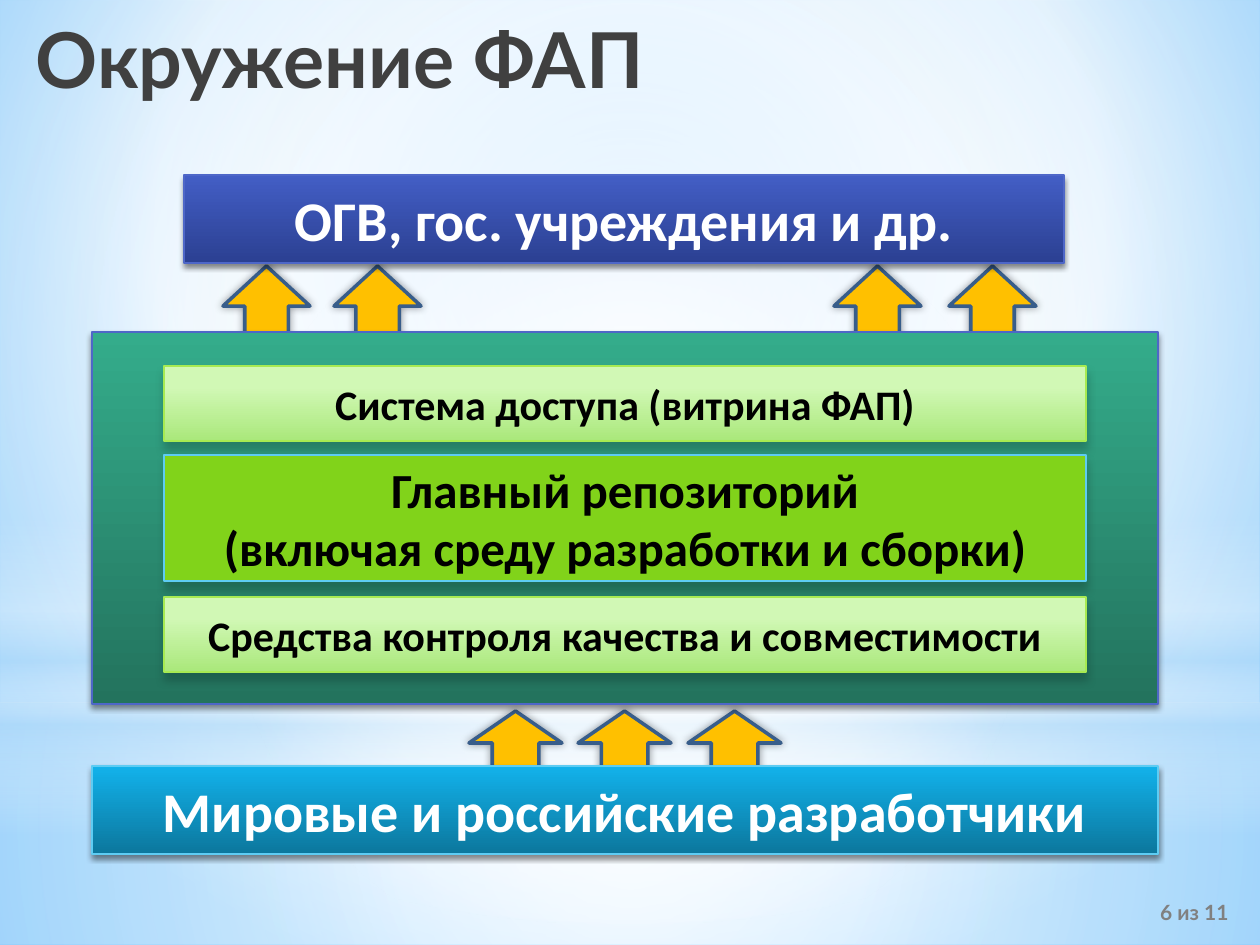
from lxml import etree
from pptx import Presentation
from pptx.dml.color import RGBColor as RGB
from pptx.enum.shapes import MSO_SHAPE as Shape
from pptx.enum.text import MSO_ANCHOR as Anchor, PP_ALIGN as Align
from pptx.oxml.ns import qn
from pptx.util import Emu, Pt

SCALE = 914400 / 126  # EMU in one px
WIDTH, HEIGHT = 1260, 945

COLORS = {
    "white": "FFFFFF", "black": "000000", "title": "404040", "page": "808080",
    "sky_mid": "9ED5FF", "sky_edge": "5BB9FF", "haze": "B4DCFA",
    "arrow": "FFC000", "arrow_line": "385D8A",
    "users_top": "435EC5", "users_bottom": "2B4092", "indigo": "4E67C8",
    "platform_top": "34AC8B", "platform_bottom": "23735D",
    "repo": "81D31A", "cyan": "5ECCF3",
    "layer_top": "D1F8B5", "layer_bottom": "AAE87B", "layer_line": "A7EA52",
    "devs_top": "12B2EB", "devs_bottom": "0C779D",
}

# Shadows: opacity %, blur pt, distance pt, direction in degrees
ARROW_SHADOW = (40, 5, 0, 0)
BAND_SHADOW = (45, 3.1, 1.8, 90)
LAYER_SHADOW = (20, 5, 4, 90)

BAND_FONT = {"name": "Calibri", "size": Pt(32), "bold": True}
LAYER_FONT = BAND_FONT | {"size": Pt(24)}
REPO_FONT = BAND_FONT | {"size": Pt(28)}
TITLE_FONT = {"name": "Lato", "size": Pt(44), "bold": True}
PAGE_FONT = TITLE_FONT | {"size": Pt(12)}


def px(*lengths):
    return [Emu(round(length * SCALE)) for length in lengths]


def add_color(parent, color, opacity=100):
    node = etree.SubElement(parent, qn("a:srgbClr"), val=COLORS[color])
    if opacity < 100:
        etree.SubElement(node, qn("a:alpha"), val=str(opacity * 1000))


def set_gradient(fill, owner, stops, center=None):
    """Vertical gradient, or a circular one around the center insets (l, t, r, b)."""
    fill.background()
    empty = owner.find(".//" + qn("a:noFill"))
    gradient = etree.Element(qn("a:gradFill"), rotWithShape="1")
    stop_list = etree.SubElement(gradient, qn("a:gsLst"))
    for position, *color in stops:
        stop = etree.SubElement(stop_list, qn("a:gs"), pos=str(position * 1000))
        add_color(stop, *color)
    if center:
        circle = etree.SubElement(gradient, qn("a:path"), {"path": "circle"})
        insets = {side: str(inset * 1000) for side, inset in zip("ltrb", center)}
        etree.SubElement(circle, qn("a:fillToRect"), insets)
    else:
        etree.SubElement(gradient, qn("a:lin"), ang="5400000", scaled="0")
    empty.getparent().replace(empty, gradient)


def add_box(slide, kind, box, fill, line=None, line_width=0.75, shadow=None, center=None):
    """Fill is a color name or a list of gradient stops."""
    shape = slide.shapes.add_shape(kind, *px(*box))
    if isinstance(fill, str):
        shape.fill.solid()
        shape.fill.fore_color.rgb = RGB.from_string(COLORS[fill])
    else:
        set_gradient(shape.fill, shape._element.spPr, fill, center)
    if line:
        shape.line.color.rgb = RGB.from_string(COLORS[line])
        shape.line.width = Pt(line_width)
    else:
        shape.line.fill.background()
    shape.shadow.inherit = False
    if shadow:
        opacity, blur, distance, direction = shadow
        effects = shape._element.spPr.find(qn("a:effectLst"))
        outer = etree.SubElement(
            effects, qn("a:outerShdw"), blurRad=str(Pt(blur)), dist=str(Pt(distance)),
            dir=str(direction * 60000), rotWithShape="0")
        add_color(outer, "black", opacity)
    return shape


def write(shape, lines, font, color, align=Align.CENTER, anchor=Anchor.MIDDLE, spacing=None):
    frame = shape.text_frame
    frame.word_wrap = True
    frame.vertical_anchor = anchor
    for index, line in enumerate(lines):
        paragraph = frame.add_paragraph() if index else frame.paragraphs[0]
        paragraph.alignment = align
        paragraph.line_spacing = spacing
        run = paragraph.add_run()
        run.text = line
        for attribute, value in font.items():
            setattr(run.font, attribute, value)
        run.font.color.rgb = RGB.from_string(COLORS[color])


def draw_backdrop(slide, box):
    left, top, width, height = box
    middle = (50, 50, 50, 50)
    set_gradient(slide.background.fill, slide._element,
                 [(0, "sky_mid"), (60, "white"), (100, "sky_edge")], (20, 10, 20, 60))
    horizon = 703
    # Floor, sky, horizon haze and the central glow
    add_box(slide, Shape.RECTANGLE, (left, top + horizon, width, height - horizon),
            [(0, "white", 91), (37, "white", 76), (100, "haze", 79)], center=middle)
    add_box(slide, Shape.RECTANGLE, (left, top, width, horizon),
            [(0, "white", 89), (48, "white", 62), (100, "haze", 79)], center=middle)
    add_box(slide, Shape.RECTANGLE, (left, top + 519, width, 315),
            [(0, "white", 0), (29, "white", 30), (45, "haze", 40),
             (55, "white", 26), (65, "haze", 60), (100, "white", 0)])
    add_box(slide, Shape.OVAL, (left, top + 220, width, horizon),
            [(0, "white"), (56, "white", 0)], center=middle)


def draw_arrows(slide, box, offsets, arrow_width):
    left, top, _, height = box
    for offset in offsets:
        arrow = add_box(slide, Shape.DOWN_ARROW, (left + offset, top, arrow_width, height),
                        "arrow", "arrow_line", 2, ARROW_SHADOW)
        arrow.rotation = 180


def draw_band(slide, box, caption, fill, line):
    band = add_box(slide, Shape.RECTANGLE, box, fill, line, shadow=BAND_SHADOW)
    write(band, [caption], BAND_FONT, "white")


def draw_platform(slide, box):
    left, top, width, _ = box
    add_box(slide, Shape.RECTANGLE, box, [(0, "platform_top"), (100, "platform_bottom")],
            "indigo", shadow=BAND_SHADOW)
    light = [(28, "layer_top"), (100, "layer_bottom")]
    layers = [
        (34, 75, light, "layer_line", LAYER_FONT, ["Система доступа (витрина ФАП)"]),
        (123, 126, "repo", "cyan", REPO_FONT,
         ["Главный репозиторий", "(включая среду разработки и сборки)"]),
        (265, 75, light, "layer_line", LAYER_FONT,
         ["Средства контроля качества и совместимости"]),
    ]
    margin = 72
    for offset, height, fill, line, font, lines in layers:
        layer = add_box(slide, Shape.RECTANGLE,
                        (left + margin, top + offset, width - 2 * margin, height),
                        fill, line, shadow=LAYER_SHADOW)
        write(layer, lines, font, "black")


def draw_title(slide, box):
    title = slide.shapes.add_textbox(*px(*box))
    write(title, ["Окружение ФАП"], TITLE_FONT, "title", Align.LEFT, Anchor.TOP, 0.9)


def draw_page_number(slide, box):
    page = slide.shapes.add_textbox(*px(*box))
    write(page, ["6 из 11"], PAGE_FONT, "page", Align.RIGHT)


def main():
    deck = Presentation()
    deck.slide_width, deck.slide_height = px(WIDTH, HEIGHT)
    slide = deck.slides.add_slide(deck.slide_layouts[6])
    draw_backdrop(slide, (0, 0, WIDTH, HEIGHT))

    # Arrows go first, so that the bands cover their feet
    draw_arrows(slide, (223, 266, 813, 80), (0, 111, 611, 726), 87)
    draw_arrows(slide, (469, 711, 312, 64), (0, 109, 219), 93)

    draw_band(slide, (184, 175, 880, 88), "ОГВ, гос. учреждения и др.",
              [(0, "users_top"), (100, "users_bottom")], "indigo")
    draw_platform(slide, (92, 332, 1066, 372))
    draw_band(slide, (92, 766, 1066, 88), "Мировые и российские разработчики",
              [(0, "devs_top"), (100, "devs_bottom")], "cyan")

    draw_title(slide, (23, 16, 1213, 158))
    draw_page_number(slide, (989, 887, 252, 50))
    deck.save("out.pptx")


if __name__ == "__main__":
    main()
